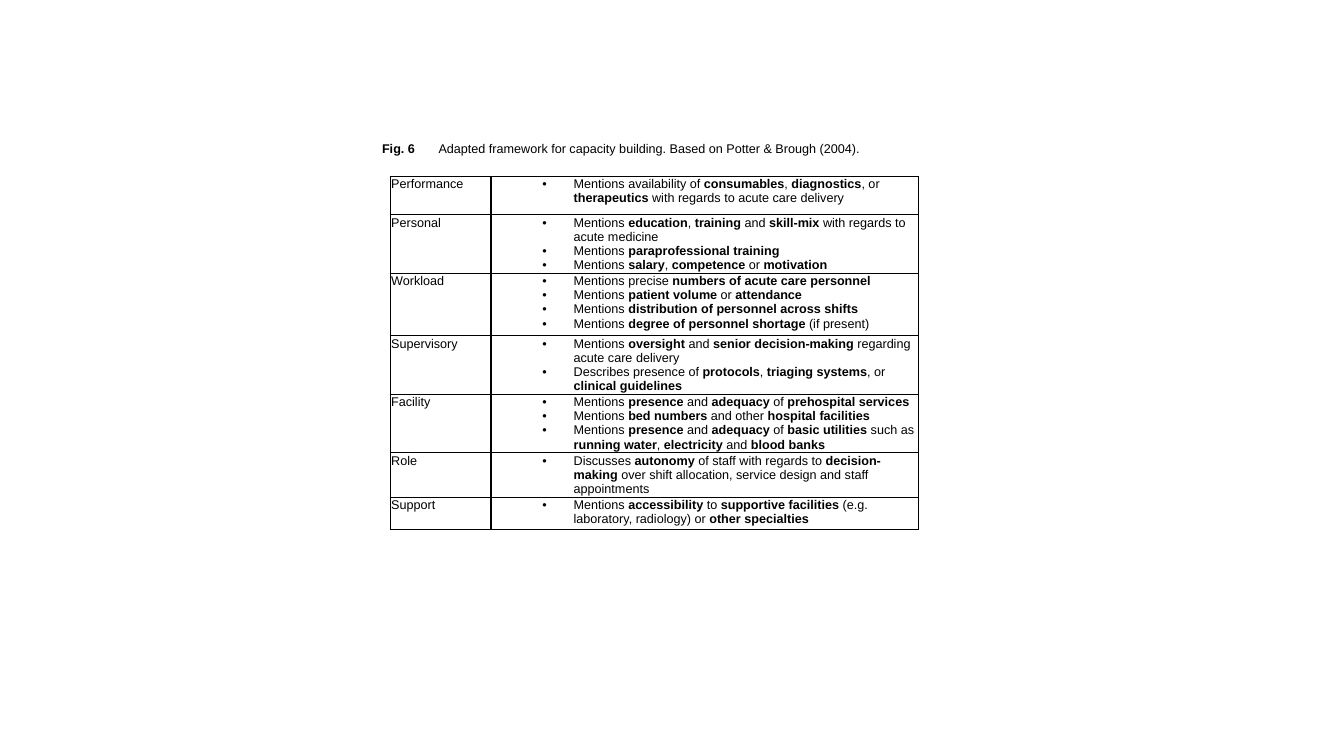
"""Build a slide with a captioned capacity-building framework table."""
from dataclasses import dataclass

from lxml import etree
from pptx import Presentation
from pptx.dml.color import RGBColor
from pptx.enum.text import MSO_AUTO_SIZE
from pptx.oxml.ns import qn
from pptx.util import Inches, Pt

FIT_SHAPE = MSO_AUTO_SIZE.SHAPE_TO_FIT_TEXT
FONT = "Arial"
FONT_SIZE = 9
BLACK = "000000"
BORDERS = {"a:lnL": 1, "a:lnR": 1, "a:lnT": 0.75, "a:lnB": 0.75}
COLUMN_WIDTHS = (1, 4.24)
CELL_MARGIN = 0.01


@dataclass(frozen=True)
class Topic:
    name: str
    height: float
    points: tuple[str, ...]


TOPICS = (
    Topic("Performance", 0.38, (
        "Mentions availability of **consumables**, **diagnostics**, or "
        "**therapeutics** with regards to acute care delivery",
    )),
    Topic("Personal", 0.5, (
        "Mentions **education**, **training** and **skill-mix** with regards to acute medicine",
        "Mentions **paraprofessional training**",
        "Mentions **salary**, **competence** or **motivation**",
    )),
    Topic("Workload", 0.62, (
        "Mentions precise **numbers of acute care personnel**",
        "Mentions **patient volume** or **attendance**",
        "Mentions **distribution of personnel across shifts**",
        "Mentions **degree of personnel shortage** (if present)",
    )),
    Topic("Supervisory", 0.56, (
        "Mentions **oversight** and **senior decision-making** regarding acute care delivery",
        "Describes presence of **protocols**, **triaging systems**, or **clinical guidelines**",
    )),
    Topic("Facility", 0.48, (
        "Mentions **presence **and** adequacy** of **prehospital services**",
        "Mentions** bed numbers **and other **hospital facilities**",
        "Mentions **presence** and **adequacy** of **basic utilities** such as "
        "**running water**, **electricity** and **blood banks**",
    )),
    Topic("Role", 0.38, (
        "Discusses **autonomy** of staff with regards to **decision-making** "
        "over shift allocation, service design and staff appointments",
    )),
    Topic("Support", 0.32, (
        "Mentions **accessibility** to **supportive facilities** (e.g. laboratory, radiology) "
        "or **other specialties**",
    )),
)


def color(value: str) -> RGBColor:
    return RGBColor.from_string(value)


def write(paragraph, text: str, *, size: float = FONT_SIZE, fill: str = BLACK,
          bullet: bool = False, tab: float | None = None) -> None:
    """Fill a paragraph, setting the text between double asterisks in bold."""
    for index, part in enumerate(text.split("**")):
        if part:
            span = paragraph.add_run()
            span.text = part
            span.font.name = FONT
            span.font.size = Pt(size)
            span.font.bold = index % 2 == 1
            span.font.color.rgb = color(fill)
    properties = paragraph._p.get_or_add_pPr()
    if bullet:
        paragraph.level = 1
        properties.set("marL", str(Inches(0.81)))
        properties.set("indent", str(Inches(-0.31)))
        etree.SubElement(properties, qn("a:buFont"), typeface=FONT)
        etree.SubElement(properties, qn("a:buChar"), char="•")
    if tab is not None:
        stops = etree.SubElement(properties, qn("a:tabLst"))
        etree.SubElement(stops, qn("a:tab"), pos=str(Inches(tab)), algn="l")


def style_cell(cell) -> None:
    """Clear the fill, tighten the margins and draw the borders of a cell."""
    cell.fill.background()
    cell.margin_left = cell.margin_right = Inches(CELL_MARGIN)
    cell.margin_top = cell.margin_bottom = Inches(CELL_MARGIN)
    properties = cell._tc.get_or_add_tcPr()
    for position, (tag, width) in enumerate(BORDERS.items()):
        line = etree.Element(qn(tag), w=str(Pt(width)))
        solid = etree.SubElement(line, qn("a:solidFill"))
        etree.SubElement(solid, qn("a:srgbClr"), val=BLACK)
        properties.insert(position, line)


def add_framework(page) -> None:
    """Add the table of topics and their points."""
    height = sum(topic.height for topic in TOPICS)
    frame = page.shapes.add_table(
        len(TOPICS), len(COLUMN_WIDTHS), Inches(3.87), Inches(1.75),
        Inches(sum(COLUMN_WIDTHS)), Inches(height))
    table = frame.table
    table.first_row = table.horz_banding = False
    for column, width in zip(table.columns, COLUMN_WIDTHS):
        column.width = Inches(width)
    for row, topic in zip(table.rows, TOPICS):
        row.height = Inches(topic.height)
        name_cell, points_cell = row.cells
        style_cell(name_cell)
        style_cell(points_cell)
        write(name_cell.text_frame.paragraphs[0], topic.name)
        body = points_cell.text_frame
        for index, point in enumerate(topic.points):
            paragraph = body.add_paragraph() if index else body.paragraphs[0]
            write(paragraph, point, bullet=True)


def add_caption(page) -> None:
    """Add the figure caption above the table."""
    box = page.shapes.add_textbox(Inches(2.83), Inches(1.35), Inches(6.67), Inches(0.25))
    body = box.text_frame
    body.word_wrap = True
    body.auto_size = FIT_SHAPE
    body.margin_left = Inches(0.96)
    write(body.paragraphs[0],
          "**Fig. 6**\tAdapted framework for capacity building. Based on Potter & Brough (2004).",
          tab=0.56)


def main() -> None:
    deck = Presentation()
    deck.slide_width = Inches(13.33)
    deck.slide_height = Inches(7.5)
    page = deck.slides.add_slide(deck.slide_layouts[6])
    add_framework(page)
    add_caption(page)
    deck.save("out.pptx")


if __name__ == "__main__":
    main()
